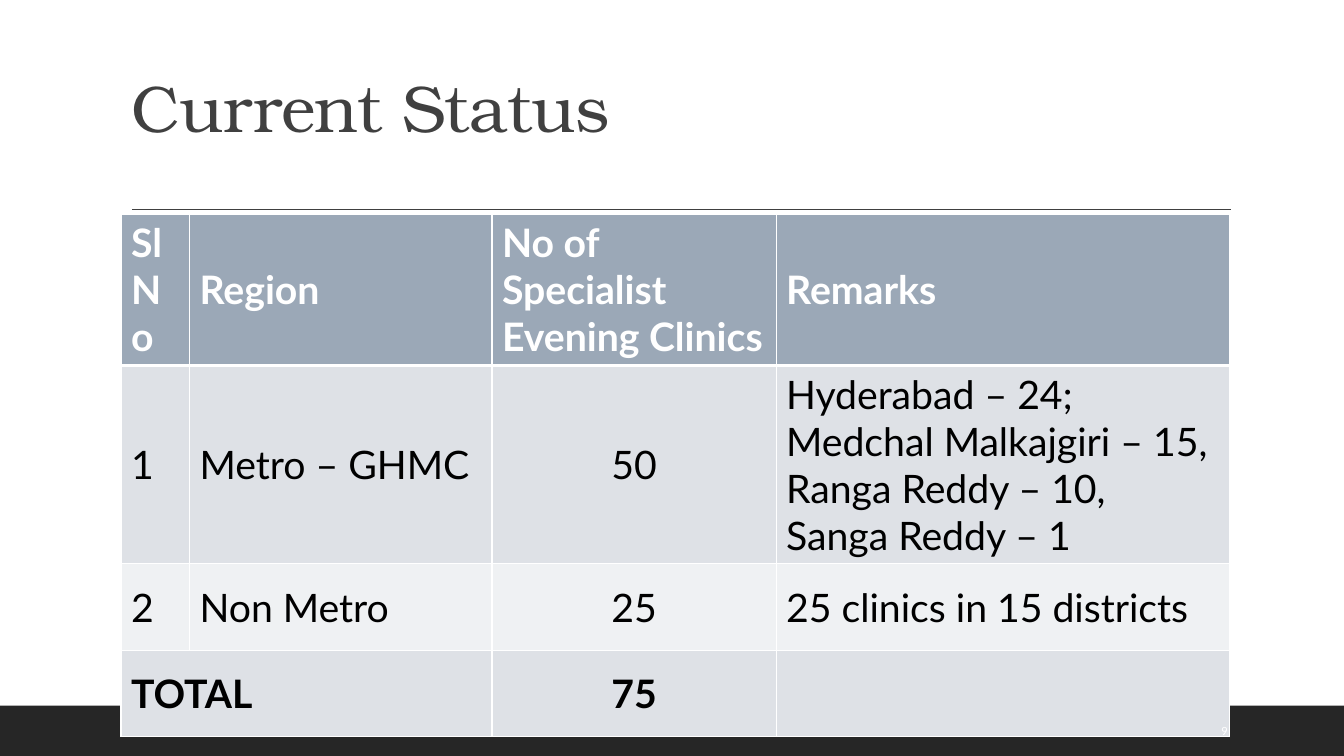
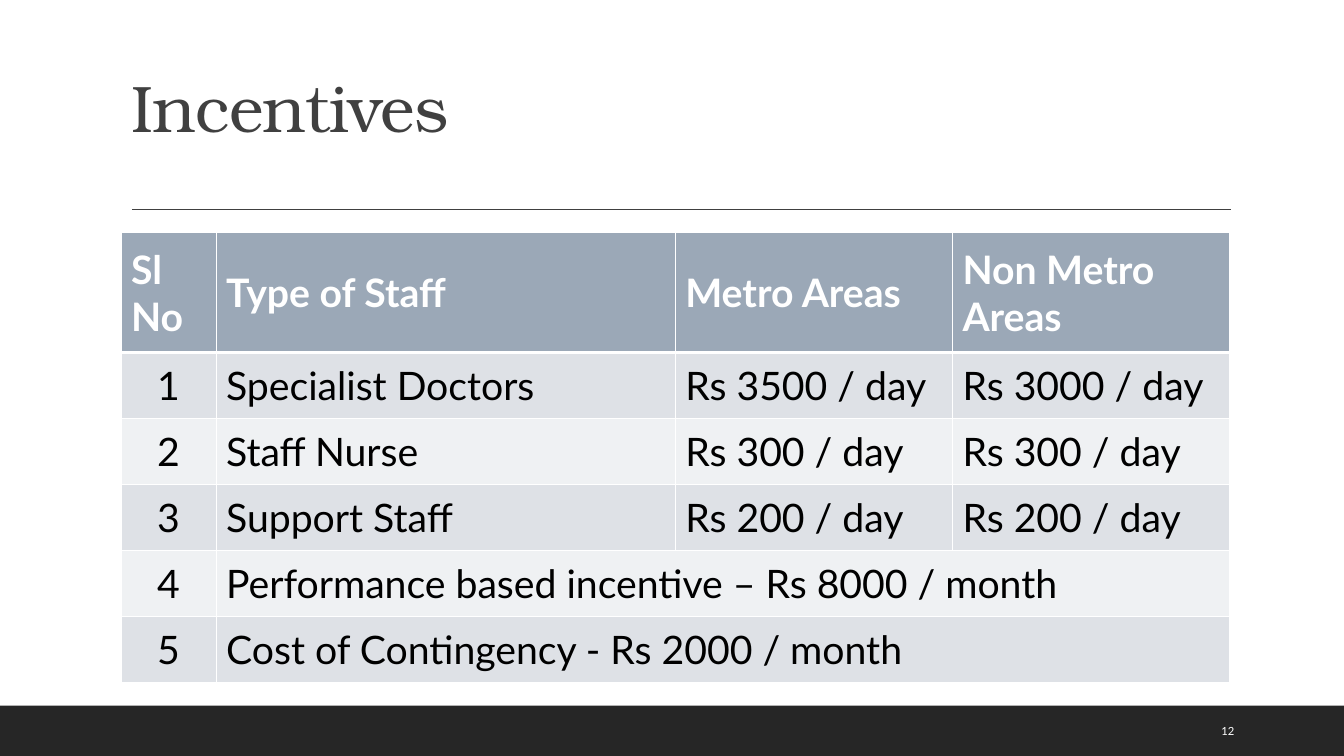
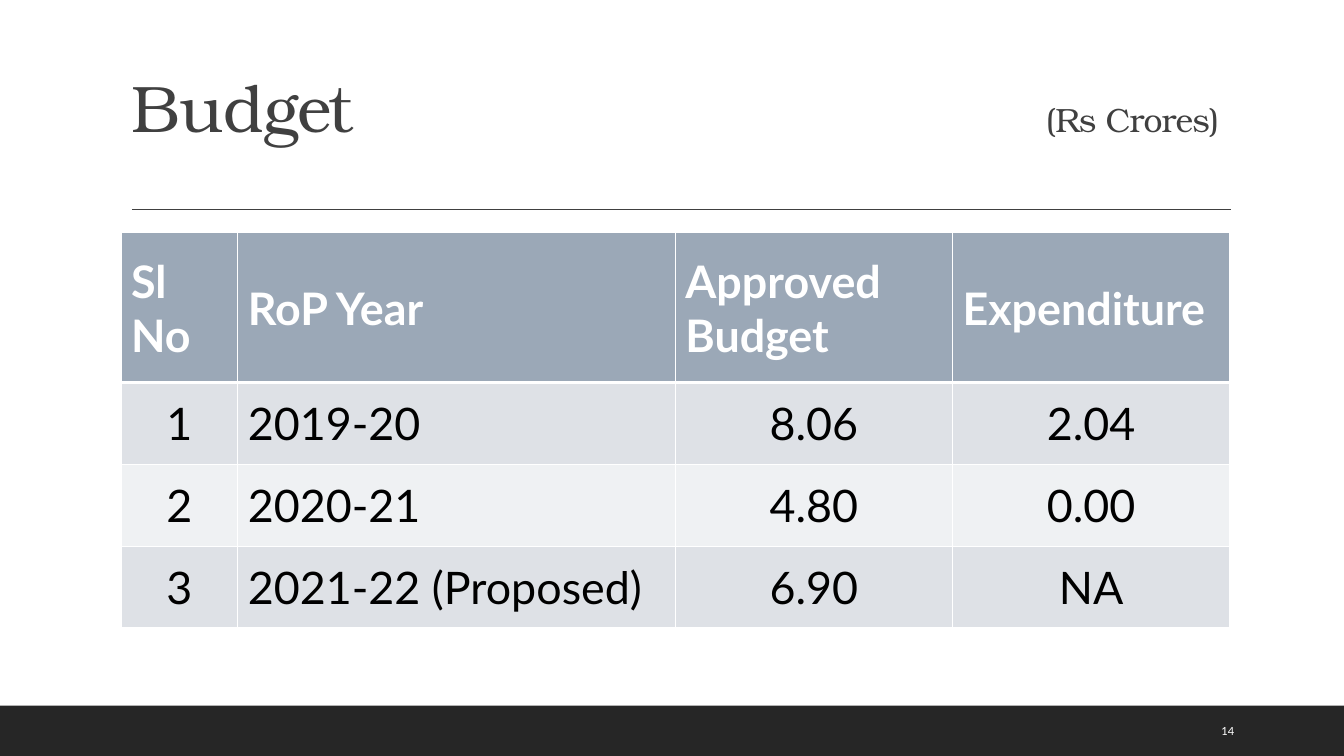
from lxml.etree import SubElement
from pptx import Presentation
from pptx.dml.color import RGBColor
from pptx.enum.shapes import MSO_CONNECTOR, MSO_SHAPE
from pptx.enum.text import MSO_ANCHOR, MSO_AUTO_SIZE, PP_ALIGN
from pptx.oxml.ns import qn
from pptx.util import Pt

COLORS = {
    "ink": "404040",
    "band": "262626",
    "head": "9BA8B7",
    "odd": "DEE1E6",
    "even": "EFF1F3",
    "white": "FFFFFF",
    "black": "000000",
}
SERIF, SANS = "TeX Gyre Bonum", "Lato"
WIDTH, HEIGHT = 960, 540
LEFT, SPAN = 86.4, 792
BAND = 504
RULE = 149.8


def rgb(name):
    """Return a palette colour."""
    return RGBColor.from_string(COLORS[name])


def style(run, face, size, color, bold=False):
    """Format one run."""
    font = run.font
    font.name, font.size, font.bold = face, Pt(size), bold
    font.color.rgb = rgb(color)


def add_base(layout, slide):
    """Place the footer band and title rule on the shared layout."""
    band = slide.shapes.add_shape(MSO_SHAPE.RECTANGLE, Pt(0), Pt(BAND), Pt(WIDTH), Pt(HEIGHT - BAND))
    band.shadow.inherit = False
    band.fill.solid()
    band.fill.fore_color.rgb = rgb("band")
    band.line.fill.background()
    rule = slide.shapes.add_connector(MSO_CONNECTOR.STRAIGHT, Pt(94.3), Pt(RULE), Pt(879), Pt(RULE))
    rule.line.color.rgb = rgb("ink")
    rule.line.width = Pt(1)
    SubElement(rule.element.spPr, qn("a:effectLst"))
    for part in (band, rule):
        layout.shapes.element.append(part.element)


def add_title(slide, text, unit):
    """Fill the title, with an optional unit at a tab stop."""
    title = slide.shapes.title
    title.left, title.top, title.width, title.height = Pt(LEFT), Pt(22.3), Pt(SPAN), Pt(114.5)
    frame = title.text_frame
    frame.text = text
    frame.word_wrap = True
    frame.auto_size = MSO_AUTO_SIZE.NONE
    frame.vertical_anchor = MSO_ANCHOR.MIDDLE
    para = frame.paragraphs[0]
    para.alignment = PP_ALIGN.LEFT
    para.line_spacing = 0.9
    if unit:
        para.runs[0].text = text + "\t"
        para.add_run().text = unit
        tabs = SubElement(para.runs[0].font._element.getparent().getparent().get_or_add_pPr(), qn("a:tabLst"))
        SubElement(tabs, qn("a:tab"), pos=str(Pt(653.5)), algn="l")
    for run, size in zip(para.runs, (47, 24)):
        style(run, SERIF, size, "ink")
        run.font._element.set("spc", "-50")


def set_edges(cell, row):
    """Draw white cell borders, thicker under the header."""
    props = cell._tc.get_or_add_tcPr()
    widths = {"L": 1, "R": 1, "T": 3 if row == 1 else 1, "B": 3 if row == 0 else 1}
    for side, width in widths.items():
        edge = SubElement(props, qn("a:ln" + side), w=str(Pt(width)))
        SubElement(SubElement(edge, qn("a:solidFill")), qn("a:srgbClr"), val=COLORS["white"])


def set_cell(cell, text, row, size, center, bold):
    """Fill and format one cell."""
    set_edges(cell, row)
    cell.fill.solid()
    cell.fill.fore_color.rgb = rgb("head" if row == 0 else "odd" if row % 2 else "even")
    cell.vertical_anchor = MSO_ANCHOR.MIDDLE
    cell.text_frame.text = text or ""
    for para in cell.text_frame.paragraphs:
        para.alignment = PP_ALIGN.CENTER if center else PP_ALIGN.LEFT
        for run in para.runs:
            style(run, SANS, size, "black" if row else "white", bold)


def add_grid(slide, top, cols, tall, rows, size, mid):
    """Add a table; None in a row extends the cell before it."""
    frame = slide.shapes.add_table(len(rows), len(cols), Pt(LEFT), Pt(top), Pt(SPAN), Pt(sum(tall)))
    table = frame.table
    table.first_row = table.horz_banding = False
    for col, width in zip(table.columns, cols):
        col.width = Pt(width)
    for i, (row, high) in enumerate(zip(rows, tall)):
        table.rows[i].height = Pt(high)
        bold = i == 0 or row[0] == "TOTAL"
        for j, text in enumerate(row):
            set_cell(table.cell(i, j), text, i, size, i > 0 and j in mid, bold)
        if None in row:
            start = row.index(None) - 1
            table.cell(i, start).merge(table.cell(i, start + row.count(None)))


def add_number(slide, text):
    """Add the page number on the footer band."""
    box = slide.shapes.add_textbox(Pt(865.4), Pt(507.6), Pt(61.2), Pt(28.8))
    frame = box.text_frame
    frame.word_wrap = True
    frame.vertical_anchor = MSO_ANCHOR.MIDDLE
    frame.text = text
    style(frame.paragraphs[0].runs[0], SANS, 8, "white")


PAGES = [
    {
        "title": "Current Status",
        "number": "9",
        "grid": {
            "top": 152.9,
            "cols": [49, 216, 203, 324],
            "tall": [78, 124.5, 62, 61.5],
            "size": 28,
            "mid": {2},
            "rows": [
                ["Sl No", "Region", "No of Specialist Evening Clinics", "Remarks"],
                ["1", "Metro – GHMC", "50",
                 "Hyderabad – 24;\nMedchal Malkajgiri – 15,\nRanga Reddy – 10,\nSanga Reddy – 1"],
                ["2", "Non Metro", "25", "25 clinics in 15 districts"],
                ["TOTAL", None, "75", ""],
            ],
        },
    },
    {
        "title": "Incentives",
        "number": "12",
        "grid": {
            "top": 166.3,
            "cols": [68, 328, 198, 198],
            "tall": [85.5] + [47.1] * 5,
            "size": 28,
            "mid": {0},
            "rows": [
                ["Sl No", "Type of Staff", "Metro Areas", "Non Metro Areas"],
                ["1", "Specialist Doctors", "Rs 3500 / day", "Rs 3000 / day"],
                ["2", "Staff Nurse", "Rs 300 / day", "Rs 300 / day"],
                ["3", "Support Staff", "Rs 200 / day", "Rs 200 / day"],
                ["4", "Performance based incentive – Rs 8000 / month", None, None],
                ["5", "Cost of Contingency - Rs 2000 / month", None, None],
            ],
        },
    },
    {
        "title": "Budget",
        "unit": "(Rs Crores)",
        "number": "14",
        "grid": {
            "top": 166.3,
            "cols": [83.5, 312.5, 198, 198],
            "tall": [107] + [58.4] * 3,
            "size": 32,
            "mid": {0, 2, 3},
            "rows": [
                ["Sl No", "RoP Year", "Approved Budget", "Expenditure"],
                ["1", "2019-20", "8.06", "2.04"],
                ["2", "2020-21", "4.80", "0.00"],
                ["3", "2021-22 (Proposed)", "6.90", "NA"],
            ],
        },
    },
]


def main():
    """Build and save the deck."""
    deck = Presentation()
    deck.slide_width, deck.slide_height = Pt(WIDTH), Pt(HEIGHT)
    layout = deck.slide_layouts[5]
    slides = [deck.slides.add_slide(layout) for page in PAGES]
    add_base(layout, slides[0])
    for slide, page in zip(slides, PAGES):
        add_title(slide, page["title"], page.get("unit"))
        add_grid(slide, **page["grid"])
        add_number(slide, page["number"])
    deck.save("out.pptx")


if __name__ == "__main__":
    main()
